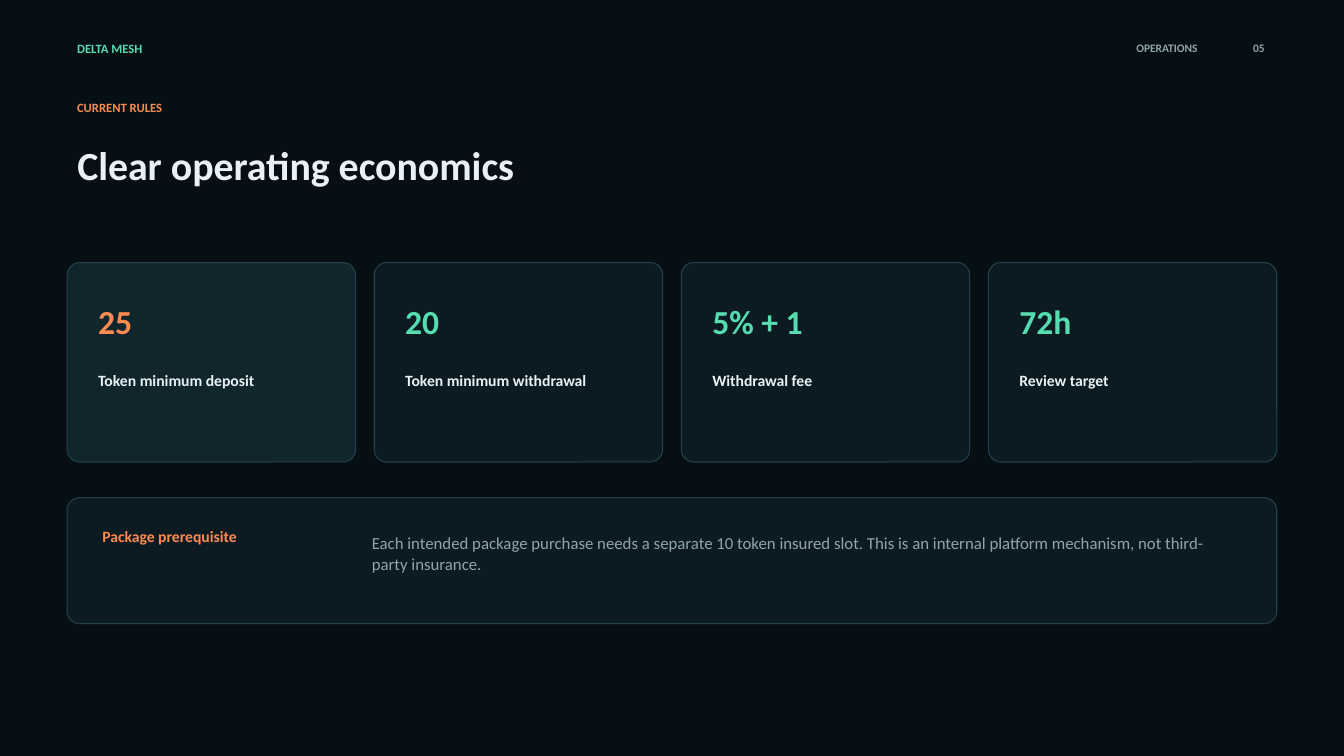
from pptx import Presentation
from pptx.dml.color import RGBColor
from pptx.enum.shapes import MSO_SHAPE
from pptx.enum.text import MSO_ANCHOR, MSO_AUTO_SIZE, PP_ALIGN
from pptx.util import Pt

ROUNDED = MSO_SHAPE.ROUNDED_RECTANGLE
MIDDLE = MSO_ANCHOR.MIDDLE
NO_AUTOFIT = MSO_AUTO_SIZE.NONE
LEFT, RIGHT = PP_ALIGN.LEFT, PP_ALIGN.RIGHT

BACKGROUND = RGBColor(0x06, 0x10, 0x14)
PANEL = RGBColor(0x0C, 0x1B, 0x21)
HIGHLIGHT = RGBColor(0x10, 0x25, 0x2C)
BORDER = RGBColor(0x24, 0x40, 0x4A)
MINT = RGBColor(0x56, 0xDC, 0xB0)
ORANGE = RGBColor(0xFF, 0x8A, 0x50)
LIGHT = RGBColor(0xE8, 0xF1, 0xF3)
MUTED = RGBColor(0x91, 0xA4, 0xAC)

FONT = "Calibri"
MARGIN = 48
CONTENT_WIDTH = 864
CARD_WIDTH = 206
CORNER_RADIUS = 9

CARDS = [
    ("25", "Token minimum deposit", HIGHLIGHT, ORANGE),
    ("20", "Token minimum withdrawal", PANEL, MINT),
    ("5% + 1", "Withdrawal fee", PANEL, MINT),
    ("72h", "Review target", PANEL, MINT),
]


def write_text(shape, text, size, color, bold=True, alignment=LEFT):
    frame = shape.text_frame
    frame_format = {
        "word_wrap": True,
        "auto_size": NO_AUTOFIT,
        "vertical_anchor": MIDDLE,
    }
    for name, value in frame_format.items():
        setattr(frame, name, value)
    paragraph = frame.paragraphs[0]
    paragraph.alignment = alignment
    run = paragraph.add_run()
    run.text = text
    font_format = {"name": FONT, "size": Pt(size), "bold": bold}
    for name, value in font_format.items():
        setattr(run.font, name, value)
    run.font.color.rgb = color


def add_text(slide, box, text, size, color, **options):
    shape = slide.shapes.add_textbox(*map(Pt, box))
    write_text(shape, text, size, color, **options)


def add_panel(slide, box, fill):
    shape = slide.shapes.add_shape(ROUNDED, *map(Pt, box))
    shape.adjustments[0] = CORNER_RADIUS / min(box[2:])
    shape.shadow.inherit = False
    shape.fill.solid()
    shape.fill.fore_color.rgb = fill
    shape.line.color.rgb = BORDER
    shape.line.width = Pt(0.75)


def add_header(slide, box):
    left, top, width, height = box
    right = left + width
    add_text(slide, (left, top, 173, height), "DELTA MESH", 9, MINT)
    add_text(slide, (right - 252, top, 202.5, height), "OPERATIONS", 8.2, MUTED,
             alignment=RIGHT)
    add_text(slide, (right - 42, top, 40.5, height), "05", 8.2, MUTED,
             alignment=RIGHT)


def add_heading(slide, box):
    left, top, width, height = box
    add_text(slide, (left, top, 263, 18), "CURRENT RULES", 9, ORANGE)
    title = slide.shapes.title
    title_format = {"left": left, "top": top + 24, "width": width,
                    "height": height - 24}
    for name, value in title_format.items():
        setattr(title, name, Pt(value))
    write_text(title, "Clear operating economics", 28.5, LIGHT)


def add_cards(slide, box):
    left, top, width, height = box
    pitch = (width - CARD_WIDTH) / (len(CARDS) - 1)
    for index, (figure, label, fill, color) in enumerate(CARDS):
        card_left = left + index * pitch
        text_left, text_width = card_left + 15, CARD_WIDTH - 30
        add_panel(slide, (card_left, top, CARD_WIDTH, height), fill)
        add_text(slide, (text_left, top + 20.5, text_width, 43), figure, 24, color)
        add_text(slide, (text_left, top + 69.5, text_width, 29), label, 11.2, LIGHT)


def add_prerequisite(slide, box):
    left, top, width, height = box
    add_panel(slide, box, PANEL)
    add_text(slide, (left + 18, top + 15, 187, 25), "Package prerequisite",
             11.2, ORANGE)
    add_text(slide, (left + 210.5, top + 13.5, 626.5, 52.5),
             "Each intended package purchase needs a separate 10 token insured "
             "slot. This is an internal platform mechanism, not third-party "
             "insurance.", 12, MUTED, bold=False)


def main():
    presentation = Presentation()
    presentation.slide_width = Pt(960)
    presentation.slide_height = Pt(540)
    slide = presentation.slides.add_slide(presentation.slide_layouts[5])
    slide.background.fill.solid()
    slide.background.fill.fore_color.rgb = BACKGROUND
    add_header(slide, (MARGIN, 25.5, CONTENT_WIDTH, 18))
    add_heading(slide, (MARGIN, 67.5, 825, 76.5))
    add_cards(slide, (MARGIN, 187.5, CONTENT_WIDTH, 142.5))
    add_prerequisite(slide, (MARGIN, 355.5, CONTENT_WIDTH, 90))
    presentation.save("out.pptx")


if __name__ == "__main__":
    main()
